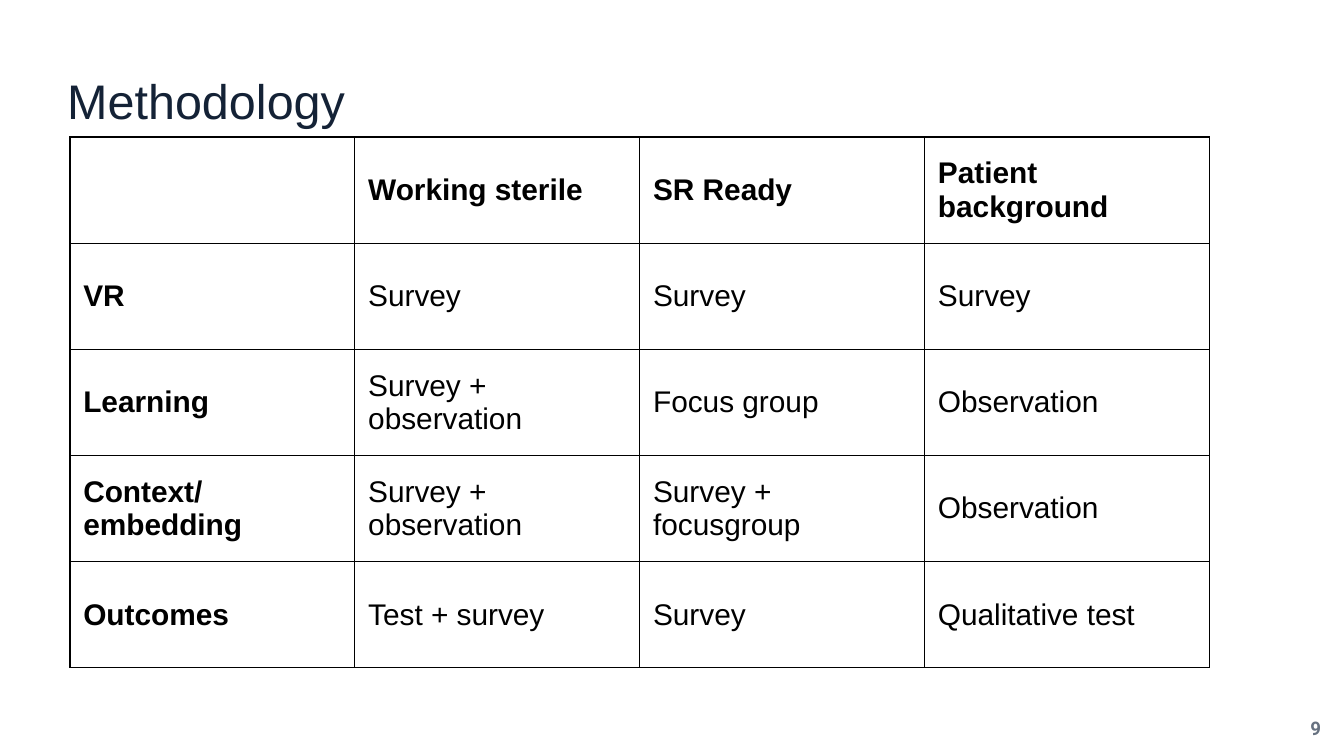
from lxml import etree
from pptx import Presentation
from pptx.dml.color import RGBColor
from pptx.enum.text import MSO_ANCHOR, MSO_AUTO_SIZE, PP_ALIGN
from pptx.oxml.ns import qn
from pptx.util import Inches, Pt

MIDDLE = MSO_ANCHOR.MIDDLE
NO_FIT = MSO_AUTO_SIZE.NONE
LEFT, CENTER = PP_ALIGN.LEFT, PP_ALIGN.CENTER

TITLE_FORMAT = {"name": "Arial", "size": Pt(26), "bold": False}
NUMBER_FORMAT = {"name": "Roboto", "size": Pt(10), "bold": True}
CELL_FORMAT = {"name": "Arial", "size": Pt(16)}
FRAME_FORMAT = {"margin_left": 0, "margin_top": 0, "margin_right": 0, "margin_bottom": 0,
                "vertical_anchor": MIDDLE, "auto_size": NO_FIT, "word_wrap": True}
CELL_BOX = {"margin_left": Inches(0.1), "margin_top": Inches(0.05),
            "margin_right": Inches(0.1), "margin_bottom": Inches(0.05),
            "vertical_anchor": MIDDLE}

ROWS = [
    ["", "Working sterile", "SR Ready", "Patient background"],
    ["VR", "Survey", "Survey", "Survey"],
    ["Learning", "Survey + observation", "Focus group", "Observation"],
    ["Context/ embedding", "Survey + observation", "Survey + focusgroup", "Observation"],
    ["Outcomes", "Test + survey", "Survey", "Qualitative test"],
]


def rgb(value):
    """Turn a hex string into a colour."""
    return RGBColor.from_string(value)


def apply(obj, values):
    """Set every attribute named in values."""
    for name, value in values.items():
        setattr(obj, name, value)


def fill_text(sp, box, text, fmt, color, align):
    """Place a text shape in its box and write one formatted line."""
    apply(sp, dict(zip(("left", "top", "width", "height"), map(Inches, box))))
    tf = sp.text_frame
    apply(tf, FRAME_FORMAT)
    p = tf.paragraphs[0]
    p.alignment = align
    r = p.add_run()
    r.text = text
    apply(r.font, fmt)
    r.font.color.rgb = rgb(color)
    return p


def add_title(s, box, text):
    """Fill the title placeholder."""
    p = fill_text(s.shapes.title, box, text, TITLE_FORMAT, "142236", LEFT)
    p.line_spacing = 0.9


def add_page_number(s, box, text):
    """Add the page number in the corner."""
    sp = s.shapes.add_textbox(0, 0, 0, 0)
    fill_text(sp, box, text, NUMBER_FORMAT, "667180", CENTER)


def set_borders(cell, color, width):
    """Draw a solid line on all four sides of a cell."""
    tc_pr = cell._tc.get_or_add_tcPr()
    for side in ("lnL", "lnR", "lnT", "lnB"):
        ln = etree.SubElement(tc_pr, qn(f"a:{side}"), w=str(Pt(width)))
        fill = etree.SubElement(ln, qn("a:solidFill"))
        etree.SubElement(fill, qn("a:srgbClr"), val=color)


def add_method_table(s, box, rows):
    """Add an even grid with a bold header row and first column."""
    x, y, w, h = map(Inches, box)
    table = s.shapes.add_table(len(rows), len(rows[0]), x, y, w, h).table
    apply(table, {"first_row": False, "horz_banding": False})
    for i, row in enumerate(rows):
        for j, text in enumerate(row):
            cell = table.cell(i, j)
            apply(cell, CELL_BOX)
            set_borders(cell, "000000", 0.75)
            cell.fill.background()
            p = cell.text_frame.paragraphs[0]
            p.font.size = CELL_FORMAT["size"]
            if text:
                r = p.add_run()
                r.text = text
                apply(r.font, CELL_FORMAT | {"bold": i == 0 or j == 0})
                r.font.color.rgb = rgb("000000")


def main():
    """Build the methodology slide."""
    prs = Presentation()
    prs.slide_width = Inches(10)
    prs.slide_height = prs.slide_width * 9 // 16
    s = prs.slides.add_slide(prs.slide_layouts[5])
    add_title(s, (0.5, 0, 3.7, 1.55), "Methodology")
    add_page_number(s, (9.58, 5.21, 0.42, 0.42), "9")
    add_method_table(s, (0.52, 1.02, 8.48, 3.95), ROWS)
    prs.save("out.pptx")


if __name__ == "__main__":
    main()
